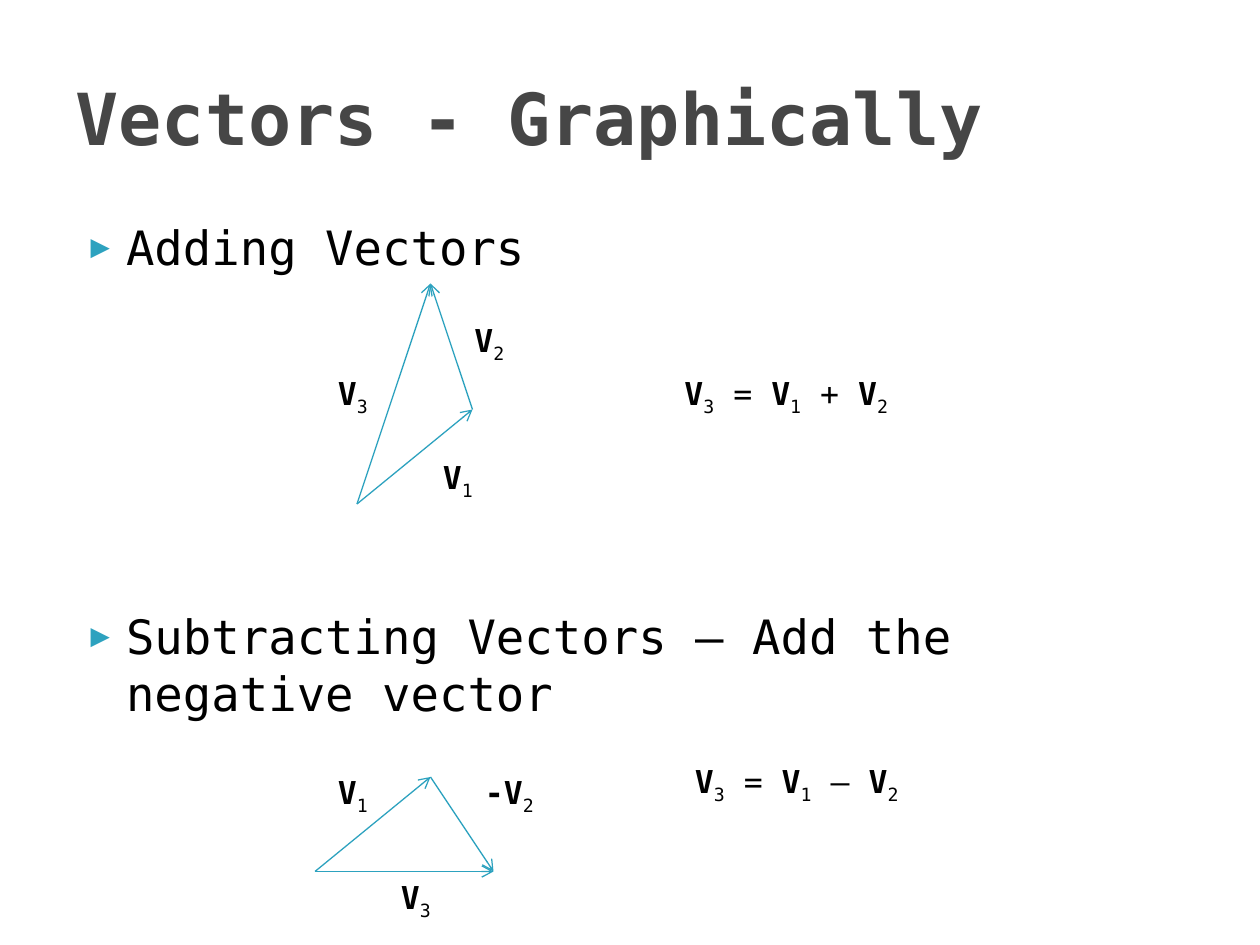
from dataclasses import dataclass
from itertools import groupby

from lxml import etree
from pptx import Presentation
from pptx.dml.color import RGBColor
from pptx.enum.shapes import MSO_CONNECTOR
from pptx.enum.text import MSO_ANCHOR, MSO_AUTO_SIZE, PP_ALIGN
from pptx.oxml.ns import qn
from pptx.util import Inches, Pt

STRAIGHT = MSO_CONNECTOR.STRAIGHT
MIDDLE, TOP = MSO_ANCHOR.MIDDLE, MSO_ANCHOR.TOP
FIXED, GROW = MSO_AUTO_SIZE.NONE, MSO_AUTO_SIZE.SHAPE_TO_FIT_TEXT
LEFT = PP_ALIGN.LEFT
CELLS_PER_INCH = 12


@dataclass(frozen=True)
class Theme:
    """Fonts, colours and sizes of the slide."""
    font: str = "DejaVu Sans Mono"
    accent: str = "2DA2BF"
    heading: str = "464646"
    text: str = "000000"
    title_size: int = 41
    body_size: int = 27
    label_size: int = 18
    line_width: float = 0.75


THEME = Theme()
TRIANGLES = [
    [((34, 48), (45, 39)), ((45, 39), (41, 27)), ((34, 48), (41, 27))],
    [((30, 83), (41, 74)), ((30, 83), (47, 83)), ((41, 74), (47, 83))],
]
LABELS = [
    ("V1", 41, 43, 0.47), ("V3", 31, 35, 0.47), ("V2", 44, 30, 0.47),
    ("V1", 31, 73, 0.47), ("-V2", 45, 73, 0.67), ("V3", 37, 83, 0.47),
    ("V3 = V1 + V2", 64, 35, 2.25), ("V3 = V1 – V2", 65, 72, 2.25),
]
TOPICS = [("Adding Vectors", 0),
          ("Subtracting Vectors – Add the negative vector", 190)]


def grid(cell):
    """Turn a grid position into a length."""
    return Inches(cell / CELLS_PER_INCH)


def style(font, size, color, bold=False):
    """Give a font the theme's face and the given look."""
    font.name = THEME.font
    font.size = Pt(size)
    font.bold = bold
    font.color.rgb = RGBColor.from_string(color)


def place(shape, left, top, width, height):
    """Move and size a shape in inches."""
    shape.left, shape.top = Inches(left), Inches(top)
    shape.width, shape.height = Inches(width), Inches(height)


def add_bullet(para):
    """Give a paragraph the hanging triangle bullet."""
    props = para._p.get_or_add_pPr()
    props.set("marL", str(Inches(0.4)))
    props.set("indent", str(Inches(-0.28)))
    color = etree.SubElement(props, qn("a:buClr"))
    etree.SubElement(color, qn("a:srgbClr"), val=THEME.accent)
    etree.SubElement(props, qn("a:buSzPct"), val="68000")
    etree.SubElement(props, qn("a:buFont"), typeface=THEME.font)
    etree.SubElement(props, qn("a:buChar"), char="▶")


def fill_title(title, text):
    """Place and write the slide title."""
    place(title, 0.5, 0.3, 9, 1.25)
    frame = title.text_frame
    frame.text = text
    frame.auto_size = FIXED
    frame.vertical_anchor = MIDDLE
    para = frame.paragraphs[0]
    para.alignment = LEFT
    style(para.runs[0].font, THEME.title_size, THEME.heading, True)


def fill_body(body, topics):
    """Place the body and write its bulleted topics."""
    place(body, 0.5, 1.68, 9, 4.89)
    frame = body.text_frame
    frame.text = "\n".join(text for text, _ in topics)
    frame.auto_size = FIXED
    frame.vertical_anchor = TOP
    for para, (_, gap) in zip(frame.paragraphs, topics):
        add_bullet(para)
        para.space_before = Pt(gap)
        style(para.runs[0].font, THEME.body_size, THEME.text)


def add_vector(slide, start, end):
    """Draw an arrow between two grid points."""
    line = slide.shapes.add_connector(STRAIGHT, *map(grid, start + end))
    line.line.width = Pt(THEME.line_width)
    line.line.color.rgb = RGBColor.from_string(THEME.accent)
    etree.SubElement(line.line._get_or_add_ln(), qn("a:tailEnd"), type="arrow")
    etree.SubElement(line._element.spPr, qn("a:effectLst"))


def char_kind(char):
    """Tell vector names, indices and operators apart."""
    if char in "-V":
        return "vector"
    return "index" if char.isdigit() else "operator"


def add_label(slide, text, column, row, width):
    """Write bold vector names with subscript indices at a grid point."""
    box = slide.shapes.add_textbox(
        grid(column), grid(row), Inches(width), Inches(0.4))
    frame = box.text_frame
    frame.word_wrap = True
    frame.auto_size = GROW
    for kind, chars in groupby(text, char_kind):
        run = frame.paragraphs[0].add_run()
        run.text = "".join(chars)
        style(run.font, THEME.label_size, THEME.text, kind == "vector")
        if kind == "index":
            run._r.get_or_add_rPr().set("baseline", "-25000")


def main():
    """Build the slide and save the deck."""
    deck = Presentation()
    deck.slide_width, deck.slide_height = Inches(10), Inches(7.5)
    slide = deck.slides.add_slide(deck.slide_layouts[1])
    fill_title(slide.shapes.title, "Vectors - Graphically")
    fill_body(slide.placeholders[1], TOPICS)
    for triangle in TRIANGLES:
        for start, end in triangle:
            add_vector(slide, start, end)
    for label in LABELS:
        add_label(slide, *label)
    deck.save("out.pptx")


if __name__ == "__main__":
    main()
